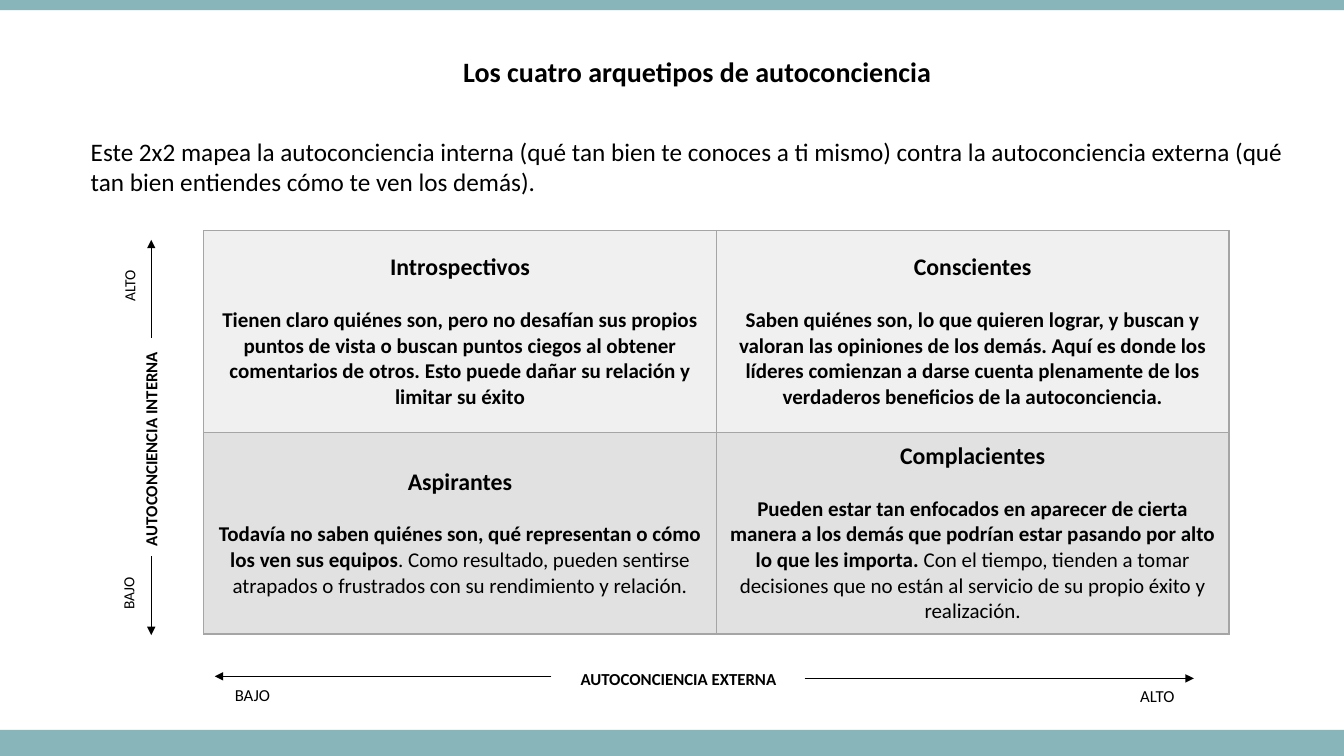
import pptx
import pptx.dml.color
import pptx.enum.shapes
import pptx.enum.text
import pptx.oxml
import pptx.oxml.ns
import pptx.util
from dataclasses import dataclass
from lxml import etree

Inches = pptx.util.Inches
Pt = pptx.util.Pt
PP_ALIGN = pptx.enum.text.PP_ALIGN
MSO_ANCHOR = pptx.enum.text.MSO_ANCHOR
qn = pptx.oxml.ns.qn


@dataclass(frozen=True)
class Theme:
    font: str = "Calibri"
    ink: str = "000000"
    band: str = "87B5BA"
    border: str = "A5A5A5"
    row_fills: tuple = ("F0F0F0", "E1E1E1")
    title: int = 20
    intro: int = 18
    heading: int = 17
    cell: int = 15
    axis: int = 12
    axis_small: int = 11


THEME = Theme()

# Each quadrant: heading, bold text, regular text
QUADRANTS = [
    [("Introspectivos",
      "Tienen claro quiénes son, pero no desafían sus propios puntos de vista o buscan "
      "puntos ciegos al obtener comentarios de otros. Esto puede dañar su relación y "
      "limitar su éxito", ""),
     ("Conscientes",
      "Saben quiénes son, lo que quieren lograr, y buscan y valoran las opiniones de los "
      "demás. Aquí es donde los líderes comienzan a darse cuenta plenamente de los "
      "verdaderos beneficios de la autoconciencia.", "")],
    [("Aspirantes",
      "Todavía no saben quiénes son, qué representan o cómo los ven sus equipos",
      ". Como resultado, pueden sentirse atrapados o frustrados con su rendimiento y "
      "relación."),
     ("Complacientes",
      "Pueden estar tan enfocados en aparecer de cierta manera a los demás que podrían "
      "estar pasando por alto lo que les importa. ",
      "Con el tiempo, tienden a tomar decisiones que no están al servicio de su propio "
      "éxito y realización.")],
]


def rgb(value):
    return pptx.dml.color.RGBColor.from_string(value)


def add_run(p, text, size, bold=False, color=THEME.ink):
    r = p.add_run()
    r.text = text
    r.font.name = THEME.font
    r.font.size = Pt(size)
    r.font.bold = bold
    r.font.color.rgb = rgb(color)


def add_band(s, top, height):
    sp = s.shapes.add_shape(pptx.enum.shapes.MSO_SHAPE.RECTANGLE,
                            0, Inches(top), Inches(13.33), Inches(height))
    sp.shadow.inherit = False
    sp.fill.solid()
    sp.fill.fore_color.rgb = rgb(THEME.band)
    sp.line.fill.background()


def fill_placeholder(sp, box, text, size, bold=False, align=PP_ALIGN.LEFT):
    sp.left, sp.top, sp.width, sp.height = map(Inches, box)
    tf = sp.text_frame
    tf.word_wrap = True
    tf.auto_size = pptx.enum.text.MSO_AUTO_SIZE.NONE
    tf.vertical_anchor = MSO_ANCHOR.TOP
    p = tf.paragraphs[0]
    p.alignment = align
    p.space_before = Pt(0)
    # No bullet or hanging indent
    pPr = p._p.get_or_add_pPr()
    pPr.set("marL", "0")
    pPr.set("indent", "0")
    etree.SubElement(pPr, qn("a:buNone"))
    add_run(p, text, size, bold)


def add_label(s, box, text, size, bold=False, rotation=0):
    sp = s.shapes.add_textbox(*map(Inches, box))
    sp.rotation = rotation
    sp.text_frame.word_wrap = True
    add_run(sp.text_frame.paragraphs[0], text, size, bold)


def add_arrow(s, start, end):
    cn = s.shapes.add_connector(pptx.enum.shapes.MSO_CONNECTOR.STRAIGHT,
                                *map(Inches, start + end))
    cn.line.color.rgb = rgb(THEME.ink)
    cn.line.width = Pt(0.5)
    etree.SubElement(cn.line._get_or_add_ln(), qn("a:tailEnd"), type="triangle")
    etree.SubElement(cn._element.spPr, qn("a:effectLst"))


def set_borders(cell):
    tcPr = cell._tc.get_or_add_tcPr()
    for i, side in enumerate(("lnL", "lnR", "lnT", "lnB")):
        ln = pptx.oxml.parse_xml(
            f'<a:{side} {pptx.oxml.ns.nsdecls("a")} w="12700"><a:solidFill>'
            f'<a:srgbClr val="{THEME.border}"/></a:solidFill></a:{side}>')
        tcPr.insert(i, ln)


def fill_cell(cell, quadrant, fill):
    heading, strong, plain = quadrant
    cell.vertical_anchor = MSO_ANCHOR.MIDDLE
    cell.fill.solid()
    cell.fill.fore_color.rgb = rgb(fill)
    set_borders(cell)
    tf = cell.text_frame
    p = tf.paragraphs[0]
    p.alignment = PP_ALIGN.CENTER
    add_run(p, heading, THEME.heading, bold=True)
    p = tf.add_paragraph()
    p.alignment = PP_ALIGN.CENTER
    p.space_before = Pt(18)
    add_run(p, strong, THEME.cell, bold=True)
    if plain:
        add_run(p, plain, THEME.cell)


def add_matrix(s, box):
    table = s.shapes.add_table(2, 2, *map(Inches, box)).table
    table.first_row = False
    table.horz_banding = False
    for i, row in enumerate(QUADRANTS):
        for j, quadrant in enumerate(row):
            fill_cell(table.cell(i, j), quadrant, THEME.row_fills[i])


def main():
    prs = pptx.Presentation()
    prs.slide_width, prs.slide_height = Inches(13.33), Inches(7.5)
    s = prs.slides.add_slide(prs.slide_layouts[1])

    # Bands at the slide edges
    add_band(s, 7.24, 0.26)
    add_band(s, 0, 0.1)

    # Title and introduction
    fill_placeholder(s.shapes.title, (3.83, 0.49, 6.17, 0.44),
                     "Los cuatro arquetipos de autoconciencia",
                     THEME.title, bold=True, align=PP_ALIGN.CENTER)
    fill_placeholder(s.placeholders[1], (0.8, 1.3, 12.22, 0.71),
                     "Este 2x2 mapea la autoconciencia interna (qué tan bien te conoces a ti "
                     "mismo) contra la autoconciencia externa (qué tan bien entiendes cómo te "
                     "ven los demás).", THEME.intro)

    # Matrix of archetypes
    add_matrix(s, (2.02, 2.29, 10.17, 4))

    # Horizontal axis
    add_label(s, (5.66, 6.59, 2.5, 0.3), "AUTOCONCIENCIA EXTERNA", THEME.axis, bold=True)
    add_label(s, (2.23, 6.74, 0.75, 0.3), "BAJO", THEME.axis)
    add_label(s, (11.21, 6.75, 0.63, 0.3), "ALTO", THEME.axis)
    add_arrow(s, (5.47, 6.71), (2.13, 6.71))
    add_arrow(s, (7.98, 6.73), (11.84, 6.73))

    # Vertical axis
    add_label(s, (0.41, 4.28, 2.17, 0.3), "AUTOCONCIENCIA INTERNA", THEME.axis,
              bold=True, rotation=270)
    add_label(s, (0.9, 5.63, 0.75, 0.29), "BAJO", THEME.axis_small, rotation=270)
    add_label(s, (0.88, 2.54, 0.81, 0.29), "ALTO", THEME.axis_small, rotation=270)
    add_arrow(s, (1.5, 3.35), (1.5, 2.38))
    add_arrow(s, (1.5, 5.52), (1.5, 6.3))

    prs.save("out.pptx")


if __name__ == "__main__":
    main()
